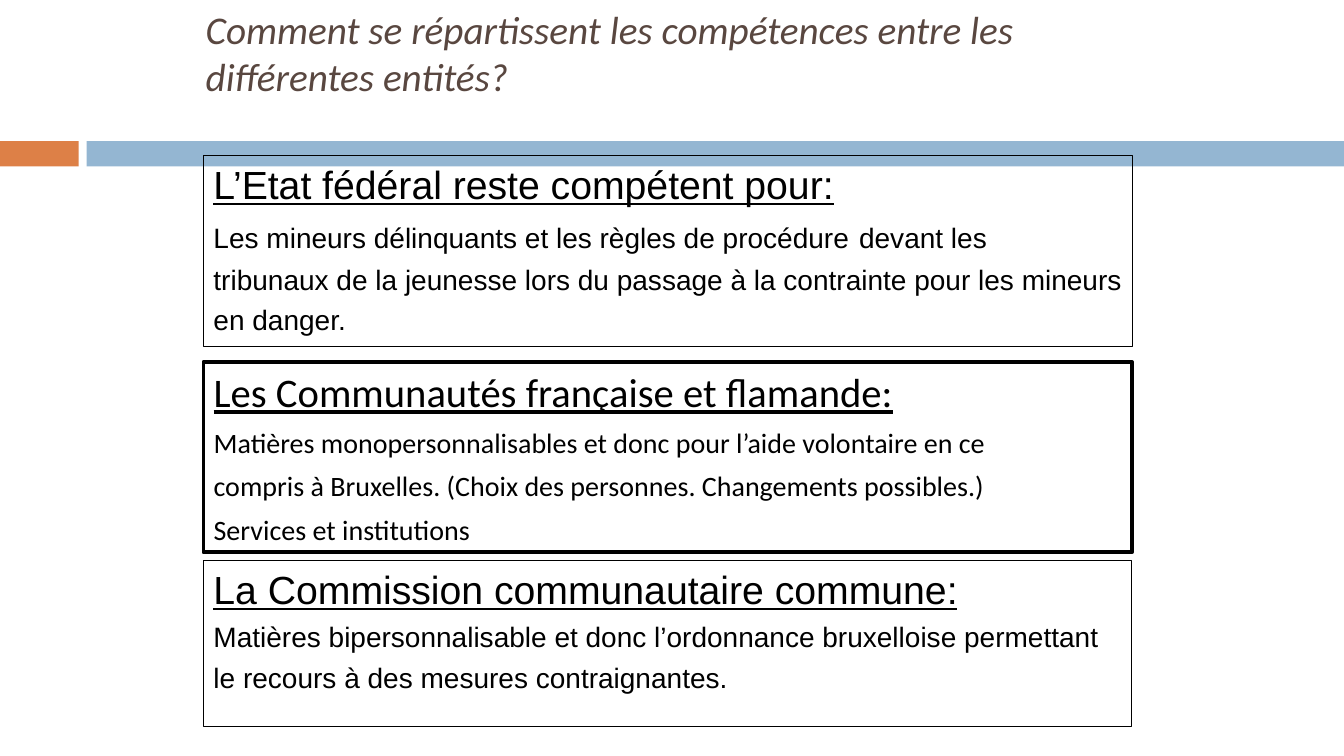
from dataclasses import dataclass

from lxml import etree
from pptx import Presentation
from pptx import util as u
from pptx.dml.color import RGBColor
from pptx.enum import shapes, text
from pptx.oxml.ns import qn


@dataclass(frozen=True)
class Theme:
    title_color: str = "594740"
    ink: str = "000000"
    orange: str = "DD8047"
    blue: str = "94B6D2"
    sans: str = "Arial"
    humanist: str = "Calibri"
    heading: float = 28
    body_heading: float = 29
    body: float = 20
    wide_space: float = 24


def add_span(para, wording, font, size, color, italic=False, underline=False):
    span = para.add_run()
    span.text = wording
    span.font.name = font
    span.font.size = u.Pt(size)
    span.font.color.rgb = RGBColor.from_string(color)
    span.font.italic = italic
    span.font.underline = underline


class SlideBuilder:
    def __init__(self, page, theme):
        self.page = page
        self.theme = theme

    def place(self, box, left, top, width, height):
        box.left, box.top = u.Pt(left), u.Pt(top)
        box.width, box.height = u.Pt(width), u.Pt(height)

    def bar(self, left, width, color):
        bar = self.page.shapes.add_shape(
            shapes.MSO_SHAPE.RECTANGLE, u.Pt(left), u.Pt(100.8), u.Pt(width), u.Pt(18))
        bar.shadow.inherit = False
        bar.fill.solid()
        bar.fill.fore_color.rgb = RGBColor.from_string(color)
        bar.line.fill.background()

    def title(self, wording):
        box = self.page.shapes.title
        self.place(box, 139.7, 0, 700, 75)
        frame = box.text_frame
        frame.auto_size = text.MSO_AUTO_SIZE.NONE
        frame.vertical_anchor = text.MSO_ANCHOR.MIDDLE
        para = frame.paragraphs[0]
        para.alignment = text.PP_ALIGN.LEFT
        add_span(para, wording, self.theme.humanist, self.theme.heading,
                 self.theme.title_color, italic=True)

    def outline(self, box, weight):
        box.fill.background()
        box.line.color.rgb = RGBColor.from_string(self.theme.ink)
        box.line.width = u.Pt(weight)

    def fill_text(self, box, heading, lines, font, heading_size, indent, gap):
        """Each line is a list of (wording, size) spans."""
        frame = box.text_frame
        frame.word_wrap = True
        frame.auto_size = text.MSO_AUTO_SIZE.NONE
        frame.vertical_anchor = text.MSO_ANCHOR.TOP
        for index, spans in enumerate([[(heading, heading_size)], *lines]):
            para = frame.add_paragraph() if index else frame.paragraphs[0]
            para.alignment = text.PP_ALIGN.LEFT
            para.space_before = u.Pt(gap)
            # Hanging indent without a bullet
            props = para._p.get_or_add_pPr()
            props.set("marL", str(u.Pt(indent)))
            props.set("indent", str(-u.Pt(indent)))
            etree.SubElement(props, qn("a:buNone"))
            for wording, size in spans:
                add_span(para, wording, font, size, self.theme.ink, underline=index == 0)

    def body(self, top, height, heading, lines):
        box = self.page.placeholders[1]
        self.place(box, 145.4, top, 663.1, height)
        self.outline(box, 2.75)
        self.fill_text(box, heading, lines, self.theme.humanist,
                       self.theme.body_heading, indent=25.2, gap=7)

    def panel(self, top, width, height, heading, lines):
        box = self.page.shapes.add_textbox(
            u.Pt(145.4), u.Pt(top), u.Pt(width), u.Pt(height))
        self.outline(box, 0.75)
        self.fill_text(box, heading, lines, self.theme.sans,
                       self.theme.heading, indent=27, gap=5)


def main():
    deck = Presentation()
    deck.slide_width, deck.slide_height = u.Pt(960), u.Pt(540)
    theme = Theme()
    size = theme.body
    builder = SlideBuilder(deck.slides.add_slide(deck.slide_layouts[1]), theme)

    # Title and coloured band
    builder.title("Comment se répartissent les compétences entre les différentes entités?")
    builder.bar(0, 56.2, theme.orange)
    builder.bar(61.9, 898.1, theme.blue)

    # Communities
    builder.body(258.5, 136.1, "Les Communautés française et flamande:", [
        [("Matières monopersonnalisables et donc pour l’aide volontaire en ce", size)],
        [("compris à Bruxelles. (Choix des personnes. Changements possibles.)", size)],
        [("Services et institutions", size)],
    ])

    # Joint commission
    builder.panel(400.3, 663.1, 118.8, "La Commission communautaire commune:", [
        [("Matières bipersonnalisable et donc l’ordonnance bruxelloise permettant", size)],
        [("le recours à des mesures contraignantes.", size)],
    ])

    # Federal state
    builder.panel(111.3, 663.8, 136.1, "L’Etat fédéral reste compétent pour:", [
        [("Les mineurs délinquants et les règles de procédure", size),
         (" ", theme.wide_space), ("devant les", size)],
        [("tribunaux de la jeunesse lors du passage à la contrainte pour les mineurs", size)],
        [("en danger.", size)],
    ])

    deck.save("out.pptx")


if __name__ == "__main__":
    main()
